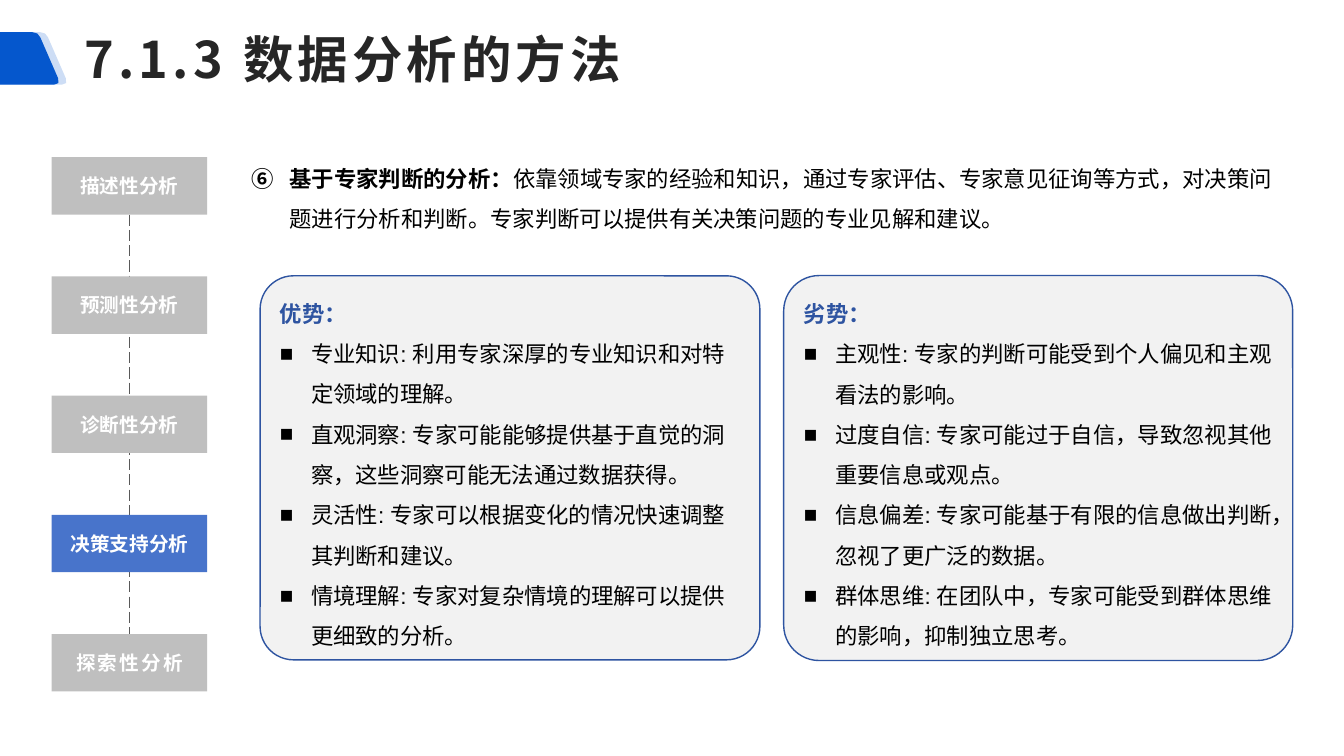
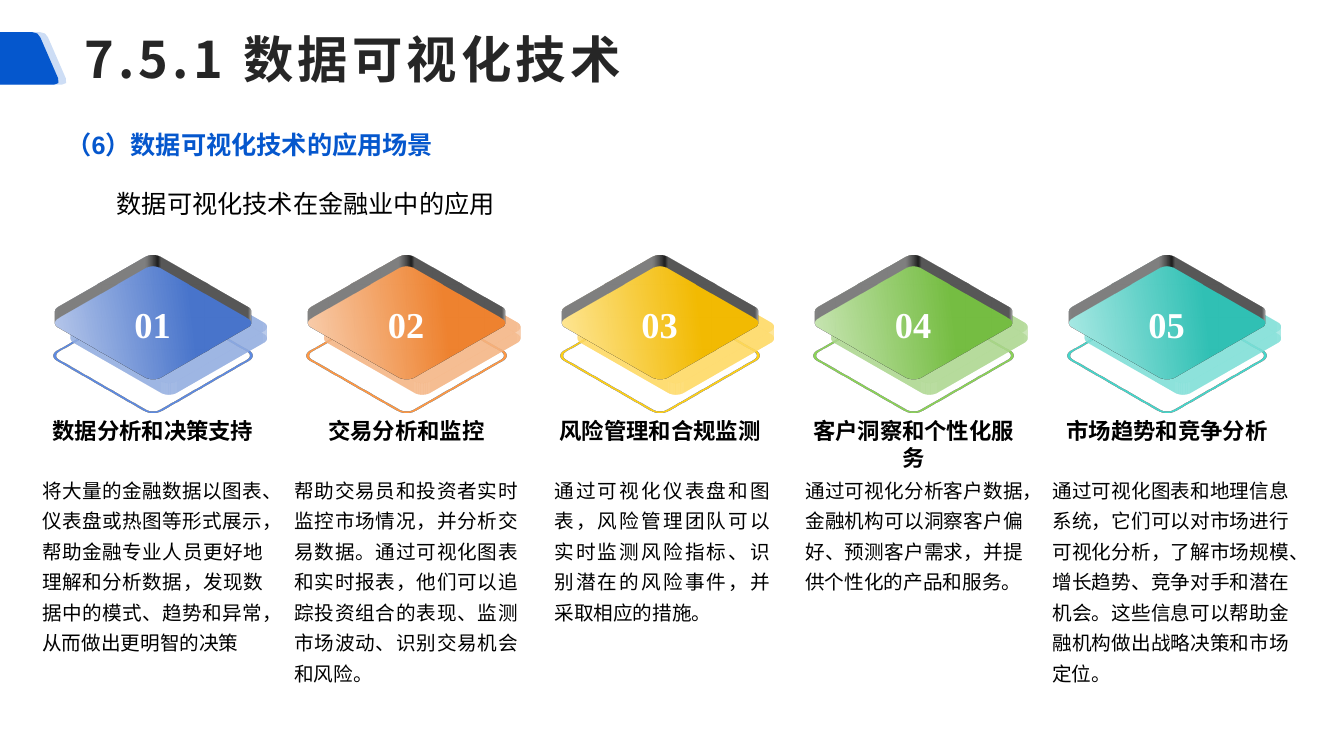
from dataclasses import dataclass
from math import hypot

from lxml.etree import SubElement as Sub
from pptx import Presentation
from pptx.dml.color import RGBColor as Rgb
from pptx.enum.dml import MSO_LINE as Dash
from pptx.enum.shapes import MSO_CONNECTOR as Link, MSO_SHAPE as Kind
from pptx.enum.text import MSO_ANCHOR as Anchor, PP_ALIGN as Align
from pptx.oxml.ns import qn
from pptx.util import Pt

Point = tuple[float, float]
Box = tuple[float, float, float, float]


@dataclass(frozen=True)
class Theme:
    brand: str = "0557CD"
    title: str = "262626"
    ink: str = "000000"
    white: str = "FFFFFF"
    navy: str = "2E54A1"
    panel: str = "F2F2F2"
    idle: str = "BFBFBF"
    active: str = "4874CB"
    link: str = "595959"
    sans: str = "Arial"
    serif: str = "Times New Roman"
    han: str = "Noto Sans CJK SC"
    kanji: str = "Noto Sans CJK JP"
    huge: float = 36
    number: float = 26
    lead: float = 18
    body: float = 16
    small: float = 14


@dataclass(frozen=True)
class Step:
    label: str
    active: bool = False
    track: float = 0


@dataclass(frozen=True)
class Card:
    box: Box
    curve: float
    head: str
    items: tuple[str, ...]


@dataclass(frozen=True)
class Tile:
    head: str
    note: str
    left: float
    width: float
    base: str
    light: str
    shade: str


LOOK = Theme()
INSET = (7.2, 3.6, 7.2, 3.6)
FLAT = (0, 0, 0, 0)
PITCH = 181.1
SIDE = 103.7

STEPS = (
    Step("描述性分析"),
    Step("预测性分析"),
    Step("诊断性分析"),
    Step("决策支持分析", active=True),
    Step("探索性分析", track=1.5),
)

CARDS = (
    Card((185.8, 197, 357, 274.3), 0.087, "优势：", (
        "专业知识: 利用专家深厚的专业知识和对特定领域的理解。",
        "直观洞察: 专家可能能够提供基于直觉的洞察，这些洞察可能无法通过数据获得。",
        "灵活性: 专家可以根据变化的情况快速调整其判断和建议。",
        "情境理解: 专家对复杂情境的理解可以提供更细致的分析。",
    )),
    Card((559.8, 196.8, 363.6, 275), 0.092, "劣势：", (
        "主观性: 专家的判断可能受到个人偏见和主观看法的影响。",
        "过度自信: 专家可能过于自信，导致忽视其他重要信息或观点。",
        "信息偏差: 专家可能基于有限的信息做出判断，忽视了更广泛的数据。",
        "群体思维: 在团队中，专家可能受到群体思维的影响，抑制独立思考。",
    )),
)

TILES = (
    Tile("数据分析和决策支持",
         "将大量的金融数据以图表、仪表盘或热图等形式展示，帮助金融专业人员更好地理解和分析数据，"
         "发现数据中的模式、趋势和异常，从而做出更明智的决策",
         30.2, 157.7, "4874CB", "B6C7EA", "91ACE0"),
    Tile("交易分析和监控",
         "帮助交易员和投资者实时监控市场情况，并分析交易数据。通过可视化图表和实时报表，"
         "他们可以追踪投资组合的表现、监测市场波动、识别交易机会和风险。",
         210.2, 159.8, "EE822F", "F8CDAC", "F5B482"),
    Tile("风险管理和合规监测",
         "通过可视化仪表盘和图表，风险管理团队可以实时监测风险指标、识别潜在的风险事件，"
         "并采取相应的措施。",
         396, 154, "F2BA02", "FEE695", "FED961"),
    Tile("客户洞察和个性化服务",
         "通过可视化分析客户数据，金融机构可以洞察客户偏好、预测客户需求，"
         "并提供个性化的产品和服务。",
         575.3, 155.5, "75BD42", "C8E5B3", "ACD78E"),
    Tile("市场趋势和竞争分析",
         "通过可视化图表和地理信息系统，它们可以对市场进行可视化分析，了解市场规模、增长趋势、"
         "竞争对手和潜在机会。这些信息可以帮助金融机构做出战略决策和市场定位。",
         751.7, 169.2, "30C0B4", "A9E9E4", "7DDFD7"),
)


def hue(code: str) -> Rgb:
    return Rgb.from_string(code)


def write(shape, text: str, *, size: float, color: str = LOOK.ink,
          font: str = LOOK.sans, han: str = LOOK.han, bold: bool = False,
          lead: str = "", align=Align.LEFT, space: float = 1, after: float = 0,
          track: float = 0, left: float = 0, first: float = 0,
          mark: str = "", count: int = 0) -> None:
    frame = shape.text_frame
    para = frame.paragraphs[0]
    if para.runs:
        para = frame.add_paragraph()
    para.alignment, para.line_spacing, para.space_after = align, space, Pt(after)
    props = para._p.get_or_add_pPr()
    props.set("marL", str(Pt(left)))
    props.set("indent", str(Pt(first)))
    if mark:
        Sub(props, qn("a:buFont"), typeface=LOOK.sans)
        Sub(props, qn("a:buChar"), char=mark)
    if count:
        Sub(props, qn("a:buAutoNum"), type="circleNumDbPlain", startAt=str(count))
    for part, heavy in ((lead, True), (text, bold)):
        if not part:
            continue
        run = para.add_run()
        run.text = part
        run.font.size, run.font.bold, run.font.name = Pt(size), heavy, font
        run.font.color.rgb = hue(color)
        form = run._r.get_or_add_rPr()
        form.set("lang", "zh-CN")
        if track:
            form.set("spc", str(int(track * 100)))
        Sub(form, qn("a:ea"), typeface=han)


def fit(shape, inset: Box = INSET, anchor=Anchor.TOP) -> None:
    frame = shape.text_frame
    frame.word_wrap, frame.vertical_anchor = True, anchor
    (frame.margin_left, frame.margin_top,
     frame.margin_right, frame.margin_bottom) = map(Pt, inset)


def label(slide, box: Box, inset: Box = INSET, anchor=Anchor.TOP):
    shape = slide.shapes.add_textbox(*map(Pt, box))
    fit(shape, inset, anchor)
    return shape


def fade(color, alpha: int) -> None:
    Sub(color, qn("a:alpha"), val=str(alpha * 1000))


def paint(shape, fill: str = "", line: str = "", width: float = 1,
          alpha: int = 100) -> None:
    shape.shadow.inherit = False
    if fill:
        shape.fill.solid()
        shape.fill.fore_color.rgb = hue(fill)
        if alpha < 100:
            fade(shape._element.spPr.find(qn("a:solidFill"))[0], alpha)
    else:
        shape.fill.background()
    if line:
        shape.line.color.rgb, shape.line.width = hue(line), Pt(width)
    else:
        shape.line.fill.background()


def blend(shape, start: str, end: str) -> None:
    shape.fill.gradient()
    shape.fill.gradient_angle = 320
    for stop, color, place in zip(shape.fill.gradient_stops, (start, end), (0, 0.7)):
        stop.color.rgb, stop.position = hue(color), place


def shade(shape, code: str) -> None:
    effects = shape._element.spPr.find(qn("a:effectLst"))
    cast = Sub(effects, qn("a:outerShdw"), blurRad=str(Pt(15)), dist=str(Pt(16)),
               dir="2700000", algn="tl", rotWithShape="0")
    fade(Sub(cast, qn("a:srgbClr"), val=code), 40)


def tilt(shape, depth: float = 0) -> None:
    props = shape._element.spPr
    scene = Sub(props, qn("a:scene3d"))
    Sub(scene, qn("a:camera"), prst="isometricTopUp")
    Sub(scene, qn("a:lightRig"), rig="threePt", dir="t")
    solid = Sub(props, qn("a:sp3d"))
    if depth:
        solid.set("extrusionH", str(Pt(depth)))


def block(slide, kind, box: Box, fill: str = "", line: str = "", width: float = 1):
    shape = slide.shapes.add_shape(kind, *map(Pt, box))
    paint(shape, fill, line, width)
    fit(shape, anchor=Anchor.MIDDLE)
    return shape


def soften(points: list[Point], cuts: list[float], steps: int = 2) -> list[Point]:
    result = []
    for i, (x, y) in enumerate(points):
        if not cuts[i]:
            result.append((x, y))
            continue
        ends = []
        for px, py in (points[i - 1], points[(i + 1) % len(points)]):
            part = cuts[i] / hypot(px - x, py - y)
            ends.append((x + (px - x) * part, y + (py - y) * part))
        (ax, ay), (bx, by) = ends
        for k in range(steps + 1):
            t = k / steps
            u, v, w = (1 - t) ** 2, 2 * t * (1 - t), t ** 2
            result.append((u * ax + v * x + w * bx, u * ay + v * y + w * by))
    return result


def trace(slide, points: list[Point]):
    spots = [(Pt(x), Pt(y)) for x, y in points]
    pen = slide.shapes.build_freeform(*spots[0])
    pen.add_line_segments(spots[1:], close=True)
    return pen.convert_to_shape()


def start(deck, title: str):
    slide = deck.slides.add_slide(deck.slide_layouts[6])
    for shift, alpha in ((5.5, 20), (0, 100)):
        edge = [(0, 23), (27.2 + shift, 23), (43.5 + shift, 60.5), (0, 60.5)]
        paint(trace(slide, soften(edge, [0, 4, 5, 0])), LOOK.brand, alpha=alpha)
    head = label(slide, (53.3, 5.8, 906.7, 72), anchor=Anchor.MIDDLE)
    write(head, title, size=LOOK.huge, color=LOOK.title, font=LOOK.han,
          bold=True, track=3)
    return slide


def chain(slide) -> None:
    line = slide.shapes.add_connector(Link.STRAIGHT, 0, 0, 0, 0)
    line.line.color.rgb, line.line.width = hue(LOOK.link), Pt(1)
    line.line.dash_style = Dash.LONG_DASH
    Sub(line._element.spPr, qn("a:effectLst"))
    boxes = []
    for i, step in enumerate(STEPS):
        fill = LOOK.active if step.active else LOOK.idle
        box = block(slide, Kind.RECTANGLE, (37, 112.3 + 85.15 * i, 111, 41), fill)
        write(box, step.label, size=LOOK.small, color=LOOK.white, font=LOOK.serif,
              bold=True, align=Align.CENTER, track=step.track)
        boxes.append(box)
    line.begin_connect(boxes[0], 2)
    line.end_connect(boxes[-1], 0)


def panel(slide, card: Card) -> None:
    shape = block(slide, Kind.ROUNDED_RECTANGLE, card.box, LOOK.panel, LOOK.navy)
    shape.adjustments[0] = card.curve
    write(shape, card.head, size=LOOK.body, color=LOOK.navy, bold=True, space=1.5)
    for item in card.items:
        write(shape, item, size=LOOK.body, space=1.5, left=22.3, first=-22.3, mark="■")


def plate(slide, mid: float, top: float, line: str):
    box = (mid - SIDE / 2, top, SIDE, SIDE)
    shape = block(slide, Kind.ROUNDED_RECTANGLE, box, line=line, width=2)
    shape.adjustments[0], shape.rotation = 0.076, 180
    return shape


def stack(slide, tile: Tile, index: int) -> None:
    mid = 109.3 + PITCH * index
    tilt(plate(slide, mid, 202.3, tile.base))
    slab = plate(slide, mid, 178.6, LOOK.white)
    blend(slab, tile.light, tile.base)
    shade(slab, tile.shade)
    tilt(slab, 10)
    count = label(slide, (mid - 29.3, 209.5, 58, 44), FLAT, Anchor.MIDDLE)
    write(count, f"{index + 1:02}", size=LOOK.number, color=LOOK.white,
          font=LOOK.serif, bold=True, align=Align.CENTER)
    head = label(slide, (mid - 84.5, 294.5, 169, 42))
    write(head, tile.head, size=LOOK.body, bold=True, align=Align.CENTER)
    note = label(slide, (tile.left, 336.7, tile.width, 168), FLAT)
    write(note, tile.note, size=LOOK.small, font=LOOK.kanji, han=LOOK.kanji,
          align=Align.JUSTIFY, space=1.3)


def method(deck) -> None:
    slide = start(deck, "7.1.3 数据分析的方法")
    for card in CARDS:
        panel(slide, card)
    chain(slide)
    intro = label(slide, (169.9, 98.3, 748.8, 77.8), (10, 10, 4.3, 10))
    write(intro, "依靠领域专家的经验和知识，通过专家评估、专家意见征询等方式，对决策问题进行分析和判断。"
          "专家判断可以提供有关决策问题的专业见解和建议。", lead="基于专家判断的分析：",
          size=LOOK.body, font=LOOK.han, space=1.5, left=27, first=-27, count=6)


def visual(deck) -> None:
    slide = start(deck, "7.5.1 数据可视化技术")
    intro = label(slide, (40.3, 77.8, 891.4, 82.8))
    write(intro, "（6）数据可视化技术的应用场景", size=LOOK.lead, color=LOOK.brand,
          bold=True, space=1.5, after=10)
    write(intro, "数据可视化技术在金融业中的应用", size=LOOK.lead, space=1.5,
          after=20, first=36)
    for i, tile in enumerate(TILES):
        stack(slide, tile, i)


def main() -> None:
    deck = Presentation()
    deck.slide_width, deck.slide_height = Pt(960), Pt(540)
    method(deck)
    visual(deck)
    deck.save("out.pptx")


if __name__ == "__main__":
    main()
